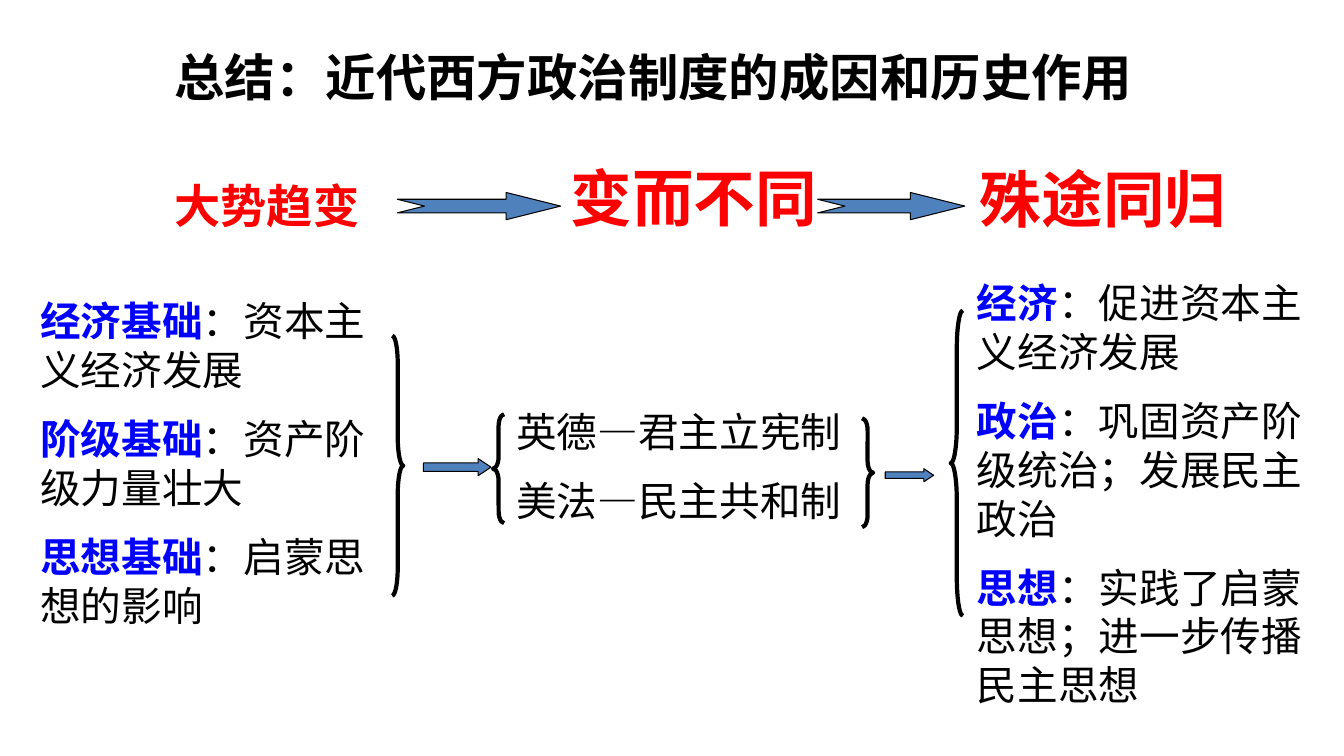
import pptx
import pptx.dml.color
import pptx.enum.shapes
import pptx.oxml.ns
import pptx.util
from lxml import etree

Inches = pptx.util.Inches
Pt = pptx.util.Pt
RGBColor = pptx.dml.color.RGBColor
SHAPE = pptx.enum.shapes.MSO_SHAPE

BLACK = RGBColor(0x00, 0x00, 0x00)
RED = RGBColor(0xFF, 0x00, 0x00)
BLUE = RGBColor(0x00, 0x00, 0xFF)
STEEL = RGBColor(0x4F, 0x81, 0xBD)
LATIN = "Calibri"
CJK = "Noto Sans CJK SC"


def add_text(slide, box, size, paragraphs):
    """Each paragraph is a list of runs: (text, colour, bold, font)."""
    frame = slide.shapes.add_textbox(*map(Inches, box)).text_frame
    frame.word_wrap = True
    frame.margin_left = frame.margin_right = Inches(0.12)
    frame.margin_top = frame.margin_bottom = Inches(0.06)
    for index, runs in enumerate(paragraphs):
        paragraph = frame.paragraphs[0]
        if index:
            paragraph = frame.add_paragraph()
            paragraph.space_before = Pt(size / 2)
        for text, color, bold, font in runs:
            run = paragraph.add_run()
            run.text = text
            run.font.size = Pt(size)
            run.font.bold = bold
            run.font.name = font
            run.font.color.rgb = color
            east_asian = etree.SubElement(run.font._element, pptx.oxml.ns.qn("a:ea"))
            east_asian.set("typeface", CJK)


def add_outlined(slide, kind, box, adjustments, line_width, fill=None):
    shape = slide.shapes.add_shape(kind, *map(Inches, box))
    shape.shadow.inherit = False
    for index, value in enumerate(adjustments):
        shape.adjustments[index] = value
    shape.line.color.rgb = BLACK
    shape.line.width = Pt(line_width)
    if fill is None:
        shape.fill.background()
    else:
        shape.fill.solid()
        shape.fill.fore_color.rgb = fill


presentation = pptx.Presentation()
presentation.slide_width = Inches(13.33)
presentation.slide_height = Inches(7.5)
slide = presentation.slides.add_slide(presentation.slide_layouts[6])

add_text(slide, (1.61, 0.4, 10.42, 0.74), 36,
         [[("总结：近代西方政治制度的成因和历史作用", BLACK, True, CJK)]])

# Stage headings
for heading, size, box in [
    ("大势趋变", 33, (1.61, 1.7, 2.22, 0.69)),
    ("变而不同", 44, (5.54, 1.53, 2.89, 0.86)),
    ("殊途同归", 44, (9.6, 1.54, 3.16, 0.86)),
]:
    add_text(slide, box, size, [[(heading, RED, True, LATIN)]])

# Causes on the left, effects on the right
for box, entries in [
    ((0.28, 2.88, 3.56, 3.53), [
        ("经济基础", "：资本主义经济发展"),
        ("阶级基础", "：资产阶级力量壮大"),
        ("思想基础", "：启蒙思想的影响"),
    ]),
    ((9.57, 2.7, 3.56, 4.51), [
        ("经济", "：促进资本主义经济发展"),
        ("政治", "：巩固资产阶级统治；发展民主政治"),
        ("思想", "：实践了启蒙思想；进一步传播民主思想"),
    ]),
]:
    add_text(slide, box, 29, [
        [(label, BLUE, True, LATIN), (detail, BLACK, False, LATIN)]
        for label, detail in entries
    ])

# Systems of government in the middle
systems = [("英德", "君主立宪制"), ("美法", "民主共和制")]
add_text(slide, (5, 3.98, 4, 1.34), 29, [
    [(countries, BLACK, False, LATIN), ("—", BLACK, False, CJK),
     (system, BLACK, False, LATIN)]
    for countries, system in systems
])

for kind, box, curve in [
    (SHAPE.RIGHT_BRACE, (3.89, 3.33, 0.11, 2.58), 2.58),
    (SHAPE.LEFT_BRACE, (4.89, 4.11, 0.11, 1.08), 1.08),
    (SHAPE.RIGHT_BRACE, (8.55, 4.15, 0.11, 1.08), 1.08),
    (SHAPE.LEFT_BRACE, (9.43, 3.08, 0.12, 3.03), 3.08),
]:
    add_outlined(slide, kind, box, (curve, 0.5), 3)

for kind, box, head in [
    (SHAPE.RIGHT_ARROW, (4.2, 4.55, 0.67, 0.17), 0.75),
    (SHAPE.RIGHT_ARROW, (8.78, 4.65, 0.48, 0.13), 0.75),
    (SHAPE.NOTCHED_RIGHT_ARROW, (3.94, 1.91, 1.62, 0.27), 2),
    (SHAPE.NOTCHED_RIGHT_ARROW, (8.11, 1.91, 1.46, 0.27), 2),
]:
    add_outlined(slide, kind, box, (0.5, head), 0.75, STEEL)

presentation.save("out.pptx")
